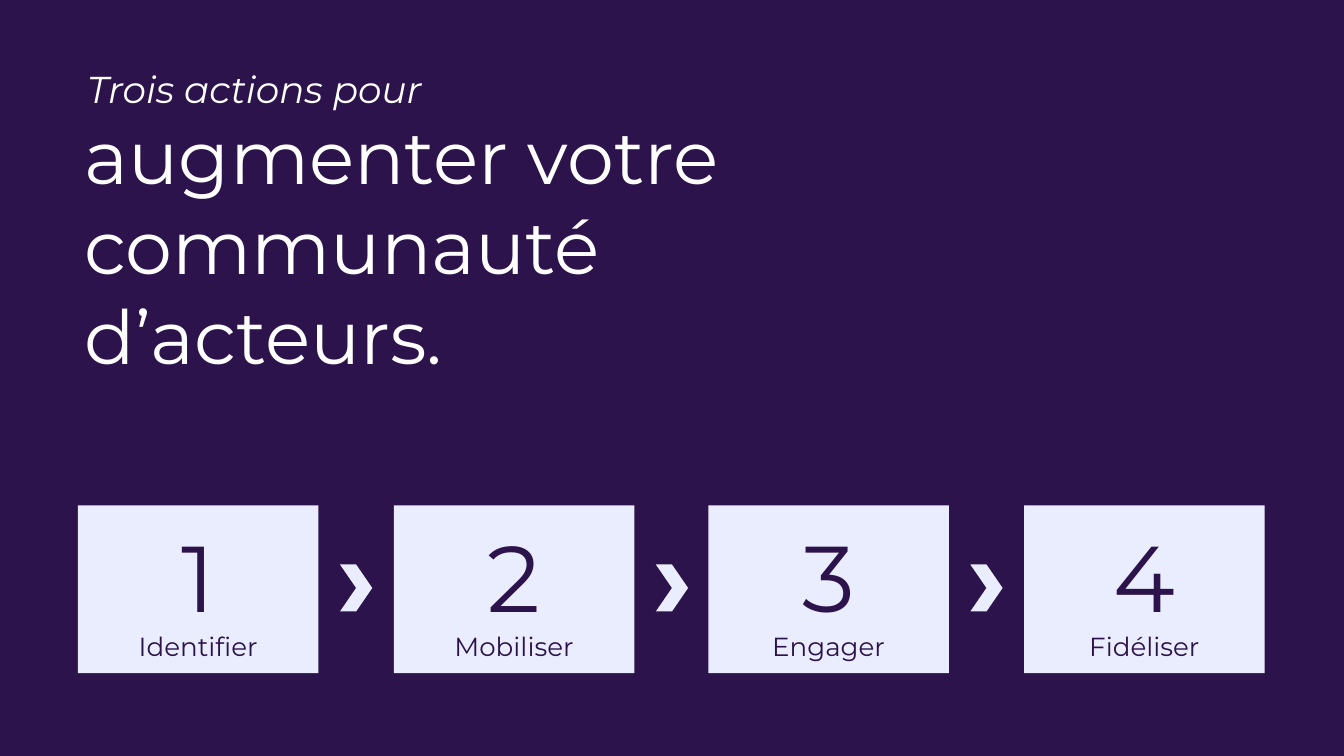
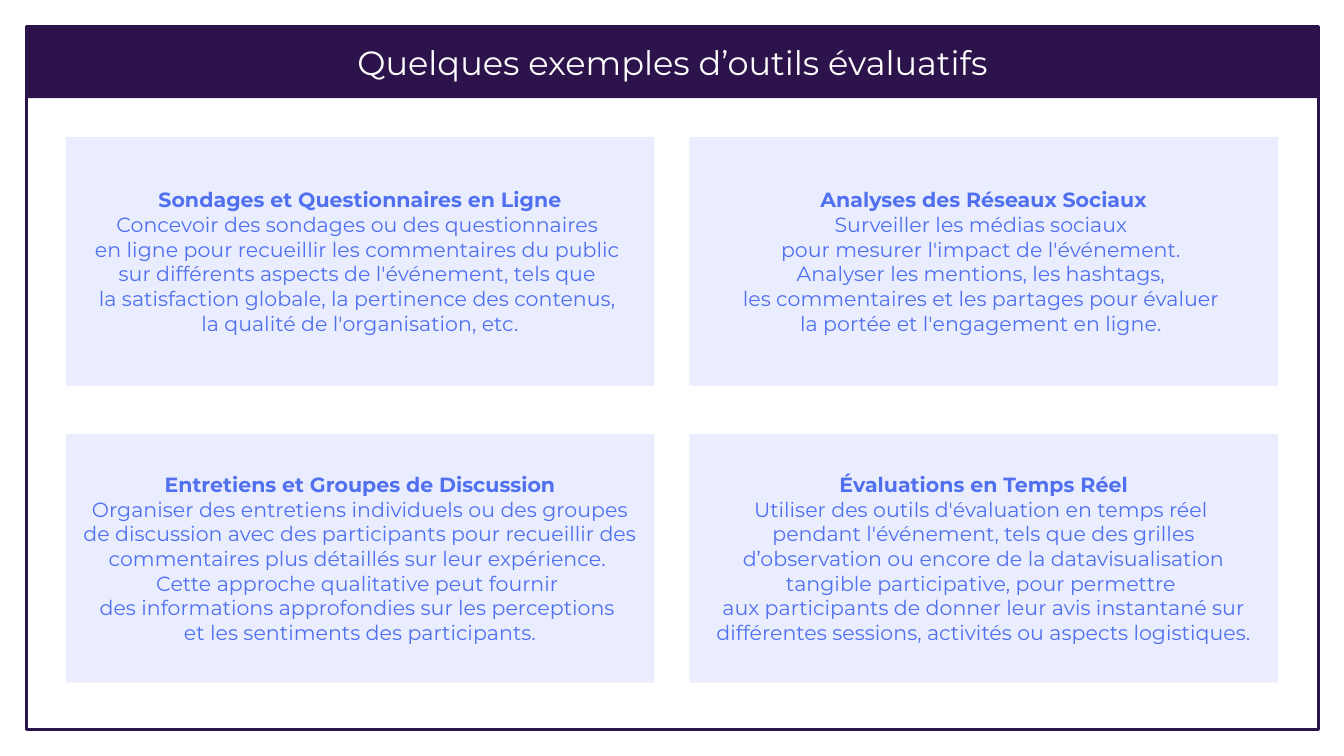
"""Build two slides on growing a community and evaluating events."""
import copy
from dataclasses import dataclass
from typing import NamedTuple

from pptx import Presentation
from pptx import util as u
from pptx.dml import color
from pptx.enum import shapes, text
from pptx.oxml import ns

EMU_PER_PX = 9144
TITLE_ONLY = 5


@dataclass(frozen=True)
class Theme:
    """Colours, font and type sizes of the deck."""
    font: str = "Montserrat"
    plum: str = "2D134B"
    lavender: str = "E9EDFD"
    blue: str = "5070F0"
    white: str = "FFFFFF"
    off_white: str = "FCFCFC"
    headline: int = 40
    kicker: int = 20
    number: int = 50
    label: int = 14
    band: int = 18
    body: int = 11


class Area(NamedTuple):
    """Left, top, width and height in px."""
    left: int
    top: int
    width: int
    height: int


class Style(NamedTuple):
    """Look of a run of text."""
    size: int
    colour: str
    bold: bool = False
    italic: bool = False


class Tool(NamedTuple):
    """An evaluation tool and its place in the grid."""
    column: int
    row: int
    name: str
    description: str


THEME = Theme()
ALIGN = text.PP_ALIGN
ANCHOR = text.MSO_ANCHOR
SHAPE = shapes.MSO_SHAPE

STEPS = ("Identifier", "Mobiliser", "Engager", "Fidéliser")
FIRST_STEP = Area(58, 376, 179, 125)
LAST_STEP_LEFT = 762
CHEVRON = Area(195, 420, 24, 35)

FRAME = Area(20, 20, 961, 523)
BAND = Area(20, 20, 961, 53)
FIRST_TILE = Area(49, 102, 438, 185)
TILE_STEP_X, TILE_STEP_Y = 464, 221

TOOLS = (
    Tool(0, 0, "Sondages et Questionnaires en Ligne",
         "Concevoir des sondages ou des questionnaires \n"
         "en ligne pour recueillir les commentaires du public \n"
         "sur différents aspects de l'événement, tels que \n"
         "la satisfaction globale, la pertinence des contenus, \n"
         "la qualité de l'organisation, etc."),
    Tool(0, 1, "Entretiens et Groupes de Discussion",
         "Organiser des entretiens individuels ou des groupes de discussion "
         "avec des participants pour recueillir des commentaires plus "
         "détaillés sur leur expérience. \n"
         "Cette approche qualitative peut fournir \n"
         "des informations approfondies sur les perceptions \n"
         "et les sentiments des participants."),
    Tool(1, 0, "Analyses des Réseaux Sociaux",
         "Surveiller les médias sociaux \n"
         "pour mesurer l'impact de l'événement. \n"
         "Analyser les mentions, les hashtags, \n"
         "les commentaires et les partages pour évaluer \n"
         "la portée et l'engagement en ligne. "),
    Tool(1, 1, "Évaluations en Temps Réel",
         "Utiliser des outils d'évaluation en temps réel \n"
         "pendant l'événement, tels que des grilles d’observation ou encore "
         "de la datavisualisation tangible participative, pour permettre \n"
         "aux participants de donner leur avis instantané sur différentes "
         "sessions, activités ou aspects logistiques."),
)


def px(length: int) -> u.Emu:
    """Turn px into EMU."""
    return u.Emu(length * EMU_PER_PX)


def rgb(value: str) -> color.RGBColor:
    """Turn a hex string into a colour."""
    return color.RGBColor.from_string(value)


def fill_with(target, colour: str) -> None:
    """Give a shape or background a solid fill."""
    target.fill.solid()
    target.fill.fore_color.rgb = rgb(colour)


def place(box, area: Area) -> None:
    """Move and size a box."""
    box.left, box.top, box.width, box.height = map(px, area)


def set_frame(box, anchor, inset: int = 10) -> None:
    """Set wrapping, anchor and insets of a text frame."""
    frame = box.text_frame
    frame.word_wrap = True
    frame.auto_size = text.MSO_AUTO_SIZE.NONE
    frame.vertical_anchor = anchor
    frame.margin_left = frame.margin_right = px(inset)
    frame.margin_top = frame.margin_bottom = px(inset)


def format_span(span, style: Style) -> None:
    """Apply a style to a run."""
    span.font.name = THEME.font
    span.font.size = u.Pt(style.size)
    span.font.color.rgb = rgb(style.colour)
    span.font.bold = style.bold
    span.font.italic = style.italic


def format_para(para, style: Style, align=ALIGN.CENTER) -> None:
    """Align a paragraph and style its runs and line breaks."""
    para.alignment = align
    for span in para.runs:
        format_span(span, style)
    for line_break in para._p.findall(ns.qn("a:br")):
        line_break.append(copy.deepcopy(para.runs[-1]._r.rPr))


def add_panel(page, area: Area, fill: str | None = THEME.lavender,
              kind=SHAPE.RECTANGLE):
    """Add a preset shape without outline or shadow."""
    panel = page.shapes.add_shape(kind, *map(px, area))
    panel.shadow.inherit = False
    panel.line.fill.background()
    if fill:
        fill_with(panel, fill)
    else:
        panel.fill.background()
    return panel


def add_page(deck, background: str, title: str, area: Area):
    """Add a title-only page and place its title."""
    page = deck.slides.add_slide(deck.slide_layouts[TITLE_ONLY])
    fill_with(page.background, background)
    box = page.shapes.title
    place(box, area)
    box.text_frame.text = title
    return page


def add_step(page, index: int, label: str) -> None:
    """Add a numbered step and the chevron that leads to the next."""
    last = len(STEPS) - 1
    span = LAST_STEP_LEFT - FIRST_STEP.left
    left = FIRST_STEP.left + round(span * index / last)
    card = add_panel(page, FIRST_STEP._replace(left=left))
    set_frame(card, ANCHOR.TOP)
    card.text_frame.text = f"{index + 1}\n{label}"
    for para, size in zip(card.text_frame.paragraphs,
                          (THEME.number, THEME.label)):
        format_para(para, Style(size, THEME.plum))
    if index < last:
        add_panel(page, CHEVRON._replace(left=left + CHEVRON.left),
                  kind=SHAPE.CHEVRON)


def add_tile(page, tool: Tool) -> None:
    """Add a tile with a tool's name and description."""
    tile = add_panel(page, FIRST_TILE._replace(
        left=FIRST_TILE.left + tool.column * TILE_STEP_X,
        top=FIRST_TILE.top + tool.row * TILE_STEP_Y))
    set_frame(tile, ANCHOR.MIDDLE)
    para = tile.text_frame.paragraphs[0]
    para.text = f"{tool.name}\n{tool.description}"
    format_para(para, Style(THEME.body, THEME.blue))
    para.runs[0].font.bold = True


def build_actions(deck) -> None:
    """Build the page with the steps to a larger community."""
    page = add_page(deck, THEME.plum, "augmenter votre communauté d’acteurs.",
                    Area(58, 115, 583, 172))
    title = page.shapes.title
    set_frame(title, ANCHOR.BOTTOM, inset=5)
    format_para(title.text_frame.paragraphs[0],
                Style(THEME.headline, THEME.white), ALIGN.LEFT)
    kicker = page.shapes.add_textbox(*map(px, Area(55, 39, 526, 54)))
    set_frame(kicker, ANCHOR.TOP)
    kicker.text_frame.text = "Trois actions pour"
    format_para(kicker.text_frame.paragraphs[0],
                Style(THEME.kicker, THEME.white, italic=True), ALIGN.LEFT)
    for index, label in enumerate(STEPS):
        add_step(page, index, label)


def build_tools(deck) -> None:
    """Build the page with the grid of evaluation tools."""
    page = add_page(deck, THEME.white, "Quelques exemples d’outils évaluatifs",
                    BAND)
    title = page.shapes.title
    fill_with(title, THEME.plum)
    set_frame(title, ANCHOR.MIDDLE)
    format_para(title.text_frame.paragraphs[0],
                Style(THEME.band, THEME.off_white))
    frame = add_panel(page, FRAME, fill=None)
    frame.line.color.rgb = rgb(THEME.plum)
    frame.line.width = u.Pt(1.5)
    for tool in TOOLS:
        add_tile(page, tool)


def main() -> None:
    """Build and save the deck."""
    deck = Presentation()
    deck.slide_width = px(1000)
    deck.slide_height = u.Emu(deck.slide_width * 9 // 16)
    build_actions(deck)
    build_tools(deck)
    deck.save("out.pptx")


if __name__ == "__main__":
    main()
